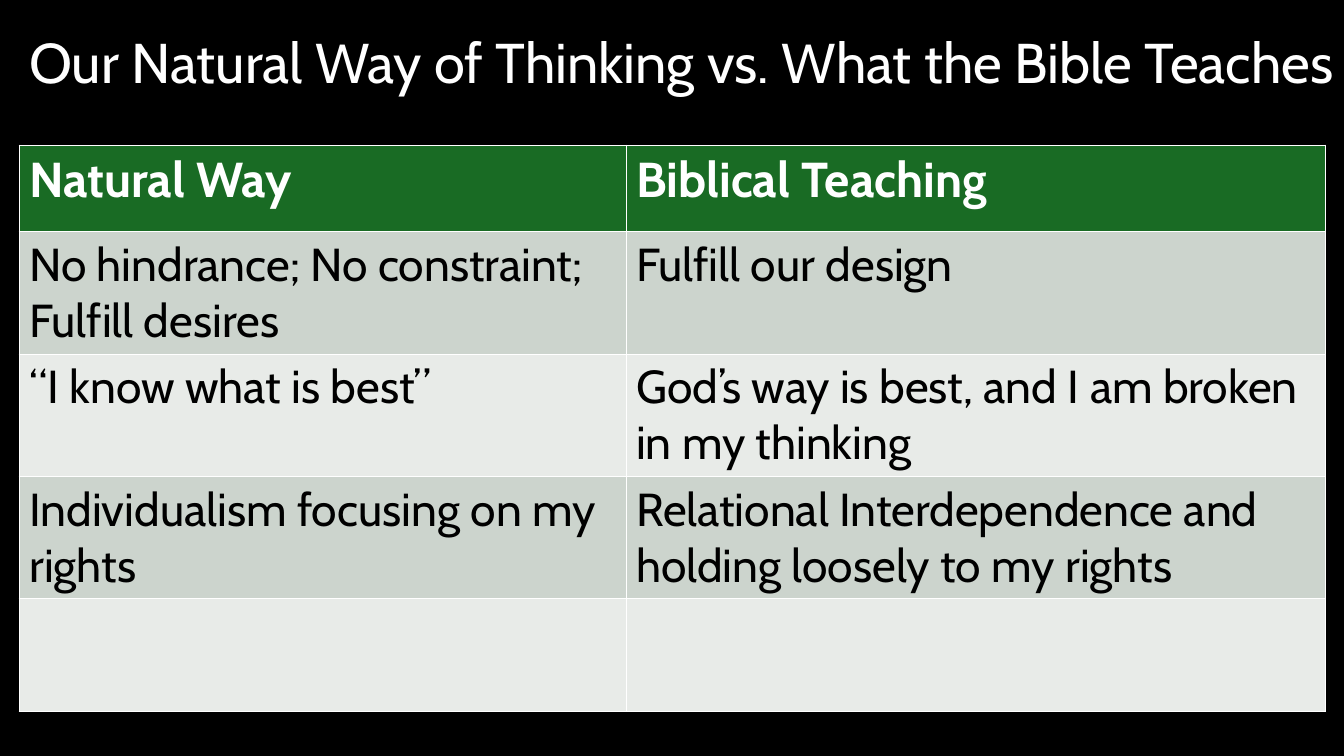
from pptx import Presentation
from pptx.dml.color import RGBColor
from pptx.enum.text import MSO_ANCHOR, MSO_AUTO_SIZE, PP_ALIGN
from pptx.util import Inches, Pt

LEFT = PP_ALIGN.LEFT
MIDDLE = MSO_ANCHOR.MIDDLE
NO_AUTOFIT = MSO_AUTO_SIZE.NONE

BLACK = RGBColor(0x00, 0x00, 0x00)
WHITE = RGBColor(0xFF, 0xFF, 0xFF)
GREEN = RGBColor(0x19, 0x6B, 0x24)
BANDS = (RGBColor(0xCC, 0xD4, 0xCD), RGBColor(0xE8, 0xEB, 0xE8))

TITLE = "Our Natural Way of Thinking vs. What the Bible Teaches"
COMPARISON = [
    ("Natural Way", "Biblical Teaching"),
    ("No hindrance; No constraint; Fulfill desires", "Fulfill our design"),
    ("“I know what is best”", "God’s way is best, and I am broken in my thinking"),
    ("Individualism focusing on my rights",
     "Relational Interdependence and holding loosely to my rights"),
    ("", ""),
]
COLUMN_WIDTHS = (6.02, 6.94)
ROW_HEIGHTS = (0.86, 1.12, 1.12, 1.12, 1.12)


class ComparisonSlide:
    font_name = "Cabin"
    title_format = {"size": Pt(40), "bold": False}
    header_format = {"size": Pt(35), "bold": True}
    body_format = {"size": Pt(33), "bold": False}

    def __init__(self, presentation):
        self.slide = presentation.slides.add_slide(presentation.slide_layouts[5])
        background = self.slide.background.fill
        background.solid()
        background.fore_color.rgb = BLACK

    def add_text(self, text_frame, text, color, font_format):
        paragraph = text_frame.paragraphs[0]
        paragraph.alignment = LEFT
        run = paragraph.add_run()
        run.text = text
        run.font.color.rgb = color
        for name, value in {"name": self.font_name, **font_format}.items():
            setattr(run.font, name, value)
        return paragraph

    def add_title(self, text, left, top, width, height):
        title = self.slide.shapes.title
        position = {"left": left, "top": top, "width": width, "height": height}
        for name, value in position.items():
            setattr(title, name, Inches(value))
        frame_format = {"word_wrap": True, "auto_size": NO_AUTOFIT,
                        "vertical_anchor": MIDDLE}
        for name, value in frame_format.items():
            setattr(title.text_frame, name, value)
        paragraph = self.add_text(title.text_frame, text, WHITE, self.title_format)
        paragraph.line_spacing = 0.9

    def add_table(self, rows, left, top, column_widths, row_heights):
        table = self.slide.shapes.add_table(
            len(rows), len(column_widths), Inches(left), Inches(top),
            Inches(sum(column_widths)), Inches(sum(row_heights))).table
        for column, width in zip(table.columns, column_widths):
            column.width = Inches(width)
        for index, (row, height) in enumerate(zip(table.rows, row_heights)):
            row.height = Inches(height)
            if index == 0:
                fill, color, font_format = GREEN, WHITE, self.header_format
            else:
                fill = BANDS[(index - 1) % len(BANDS)]
                color, font_format = BLACK, self.body_format
            for cell, text in zip(row.cells, rows[index]):
                cell.fill.solid()
                cell.fill.fore_color.rgb = fill
                if text:
                    self.add_text(cell.text_frame, text, color, font_format)


def main():
    presentation = Presentation()
    presentation.slide_width = Inches(13.33)
    presentation.slide_height = Inches(7.5)
    comparison = ComparisonSlide(presentation)
    comparison.add_title(TITLE, 0.19, 0.17, 13.15, 0.96)
    comparison.add_table(COMPARISON, 0.19, 1.44, COLUMN_WIDTHS, ROW_HEIGHTS)
    presentation.save("out.pptx")


if __name__ == "__main__":
    main()
